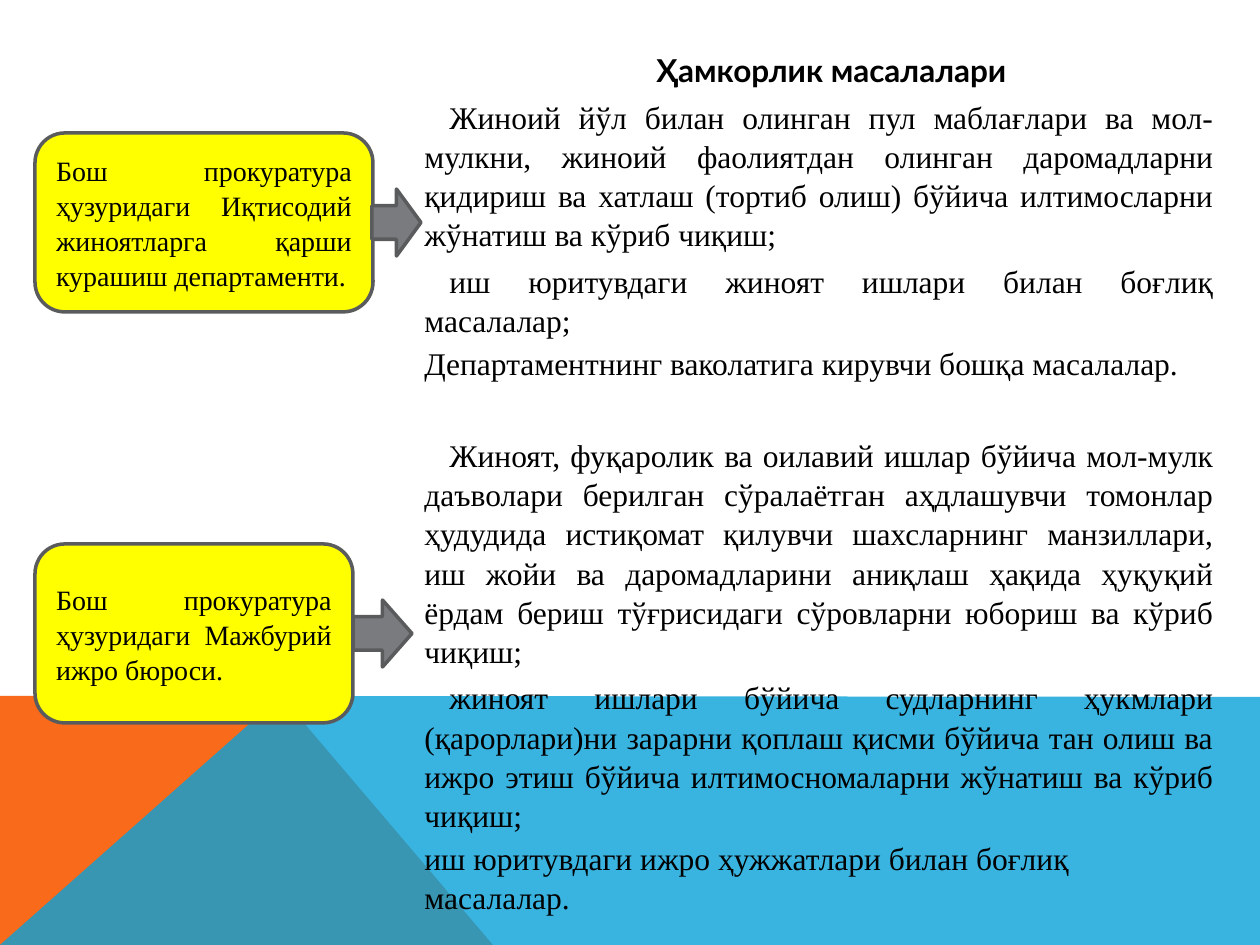
from lxml.etree import SubElement
from pptx import Presentation
from pptx.dml.color import RGBColor
from pptx.enum.shapes import MSO_SHAPE as Preset
from pptx.enum.text import MSO_ANCHOR as Anchor, PP_ALIGN as Align
from pptx.oxml.ns import qn
from pptx.util import Emu, Pt

SCALE = 914400 / 126
COLORS = {
    "orange": "F96A1B",
    "blue": "08A1D9",
    "yellow": "FFFF00",
    "gray": "797B7E",
    "outline": "5A5B5D",
    "ink": "000000",
}
SERIF = "Times New Roman"
FIRST_LINE = 25

TITLE = "Ҳамкорлик масалалари"
SECTIONS = [
    {
        "agency": "Бош прокуратура ҳузуридаги Иқтисодий жиноятларга қарши курашиш департаменти.",
        "agency_box": (35, 133, 338, 179),
        "arrow_box": (372, 189, 49, 67),
        "duties_box": (412, 45, 814, 335),
        "title": TITLE,
        "duties": [
            "Жиноий йўл билан олинган пул маблағлари ва мол-мулкни, жиноий фаолиятдан олинган даромадларни қидириш ва хатлаш (тортиб олиш) бўйича илтимосларни жўнатиш ва кўриб чиқиш;",
            "иш юритувдаги жиноят ишлари билан боғлиқ масалалар;",
        ],
        "closing": "Департаментнинг ваколатига кирувчи бошқа масалалар.",
    },
    {
        "agency": "Бош прокуратура ҳузуридаги Мажбурий ижро бюроси.",
        "agency_box": (35, 544, 318, 179),
        "arrow_box": (353, 600, 59, 67),
        "duties_box": (412, 428, 814, 481),
        "title": None,
        "duties": [
            "Жиноят, фуқаролик ва оилавий ишлар бўйича мол-мулк даъволари берилган сўралаётган аҳдлашувчи томонлар ҳудудида истиқомат қилувчи шахсларнинг манзиллари, иш жойи ва даромадларини аниқлаш ҳақида ҳуқуқий ёрдам бериш тўғрисидаги сўровларни юбориш ва кўриб чиқиш;",
            "жиноят ишлари бўйича судларнинг ҳукмлари (қарорлари)ни зарарни қоплаш қисми бўйича тан олиш ва ижро этиш бўйича илтимосномаларни жўнатиш ва кўриб чиқиш;",
        ],
        "closing": "иш юритувдаги ижро ҳужжатлари билан боғлиқ масалалар.",
    },
]


def px(length):
    """Turn px into EMU."""
    return Emu(round(length * SCALE))


def paint(shape, fill, outlined=False):
    """Give a shape a flat fill and, if asked, the gray outline."""
    shape.shadow.inherit = False
    shape.fill.solid()
    shape.fill.fore_color.rgb = RGBColor.from_string(COLORS[fill])
    if outlined:
        shape.line.color.rgb = RGBColor.from_string(COLORS["outline"])
        shape.line.width = Pt(2)
    else:
        shape.line.fill.background()


def write(paragraph, text, size, align, font=SERIF, bold=False, leading=1.04):
    """Fill one paragraph with text in a single style."""
    paragraph.text = text
    paragraph.alignment = align
    paragraph.line_spacing = leading
    paragraph.font.name = font
    paragraph.font.size = Pt(size)
    paragraph.font.bold = bold
    paragraph.font.color.rgb = RGBColor.from_string(COLORS["ink"])


def indent(paragraph):
    """Indent the first line and add space around the paragraph."""
    paragraph.space_before = paragraph.space_after = Pt(2)
    properties = paragraph._p.get_or_add_pPr()
    properties.set("marL", "0")
    properties.set("indent", str(px(FIRST_LINE)))


def add_band(slide, box, corners, fill, alpha=None):
    """Draw a background polygon with corners relative to its box."""
    left, top = box
    (start_x, start_y), *others = [(left + x, top + y) for x, y in corners]
    builder = slide.shapes.build_freeform(start_x, start_y, scale=SCALE)
    builder.add_line_segments(others, close=True)
    band = builder.convert_to_shape()
    paint(band, fill)
    if alpha:
        color = band._element.spPr.find(qn("a:solidFill"))[0]
        SubElement(color, qn("a:alpha"), val=str(alpha * 1000))


def add_background(slide, box):
    """Place the orange and blue bands at the foot of the slide."""
    left, top, width, height = box
    peak = 281
    add_band(slide, (left, top), [(0, height), (0, 0), (peak, 0), (493, height)], "orange")
    add_band(slide, (left, top), [(0, height), (peak, 0), (width, 1), (width, height)], "blue", 80)


def add_duties(slide, box, title, duties, closing):
    """Place the text column with its optional title."""
    frame = slide.shapes.add_textbox(*map(px, box)).text_frame
    frame.word_wrap = True
    paragraphs = [frame.paragraphs[0]]
    for _ in range(len(duties) + bool(title)):
        paragraphs.append(frame.add_paragraph())
    remaining = iter(paragraphs)
    if title:
        heading = next(remaining)
        write(heading, title, 18, Align.CENTER, "Lato", True, 1.0)
        indent(heading)
    for duty in duties:
        paragraph = next(remaining)
        write(paragraph, duty, 18, Align.JUSTIFY)
        indent(paragraph)
    write(next(remaining), closing, 18, Align.LEFT)


def add_agency(slide, box, name):
    """Place the yellow rounded box with the agency name."""
    agency = slide.shapes.add_shape(Preset.ROUNDED_RECTANGLE, *map(px, box))
    paint(agency, "yellow", outlined=True)
    frame = agency.text_frame
    frame.word_wrap = True
    frame.vertical_anchor = Anchor.MIDDLE
    write(frame.paragraphs[0], name, 16, Align.JUSTIFY)


def add_section(slide, section):
    """Place one agency, its arrow and its duties."""
    add_duties(slide, section["duties_box"], section["title"], section["duties"], section["closing"])
    add_agency(slide, section["agency_box"], section["agency"])
    arrow = slide.shapes.add_shape(Preset.RIGHT_ARROW, *map(px, section["arrow_box"]))
    paint(arrow, "gray", outlined=True)


def main():
    """Build and save the slide."""
    deck = Presentation()
    deck.slide_width, deck.slide_height = px(1260), px(945)
    slide = deck.slides.add_slide(deck.slide_layouts[6])
    add_background(slide, (0, 696, 1260, 249))
    for section in SECTIONS:
        add_section(slide, section)
    deck.save("out.pptx")


if __name__ == "__main__":
    main()
